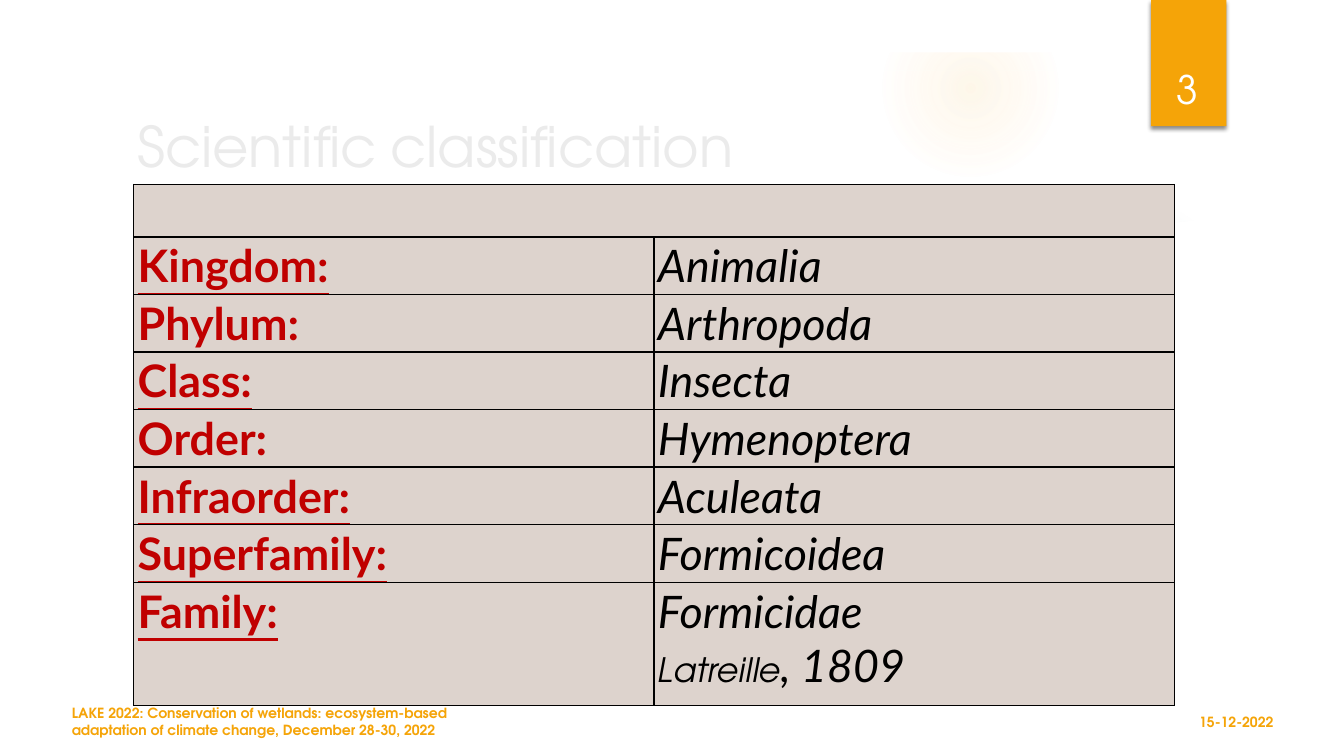
import pptx
import pptx.dml.color
import pptx.enum.shapes
import pptx.enum.text
import pptx.oxml
import pptx.oxml.ns
import pptx.util

Cm, Pt = pptx.util.Cm, pptx.util.Pt
RGBColor = pptx.dml.color.RGBColor
ALIGN = pptx.enum.text.PP_ALIGN
ANCHOR = pptx.enum.text.MSO_ANCHOR
SHAPE = pptx.enum.shapes.MSO_SHAPE

AMBER = RGBColor(0xF5, 0xA4, 0x08)
GLOW_AMBER = RGBColor(0xFA, 0xC9, 0x6A)
GLOW_BLUE = RGBColor(0x8E, 0xBB, 0xD2)
WHITE = RGBColor(0xFF, 0xFF, 0xFF)
PALE = RGBColor(0xEB, 0xEB, 0xEB)
BEIGE = RGBColor(0xDD, 0xD3, 0xCD)
RED = RGBColor(0xC0, 0x00, 0x00)
BLACK = RGBColor(0x00, 0x00, 0x00)
HEADING_FONT, TABLE_FONT = "TeX Gyre Adventor", "Lato"

TITLE = [("Scientific", 40), (" ", 36), ("classification", 40)]
RANKS = [
    ("Kingdom:", "Animalia"),
    ("Phylum:", "Arthropoda"),
    ("Class:", "Insecta"),
    ("Order:", "Hymenoptera"),
    ("Infraorder:", "Aculeata"),
    ("Superfamily:", "Formicoidea"),
    ("Family:", "Formicidae"),
]
AUTHORITY = [("Latreille", 24, HEADING_FONT), (", 1809", 32, TABLE_FONT)]
CONFERENCE = ("LAKE 2022: Conservation of wetlands: ecosystem-based "
              "adaptation of climate change, December 28-30, 2022")
DATE = "15-12-2022"
PAGE = "3"

SLIDE_WIDTH, SLIDE_HEIGHT = 33.87, 19.05
TABLE_LEFT, TABLE_TOP, COLUMN_WIDTH = 3.37, 4.65, 13.11
ROW_HEIGHTS = [1.32] + [1.45] * 6 + [3.1]

# Box, colour, then (position %, opacity %) stops
GLOWS = [
    ((23.9, 4.65, 7.82, 7.82), GLOW_BLUE, [(0, 7), (36, 6), (69, 0)]),
    ((22.23, 0, 4.45, 4.45), GLOW_AMBER, [(0, 14), (36, 7), (73, 0)]),
]
# Curved upper edge of the white panel, right to left, then its lower corners
PANEL = [(32.6, 5.18), (30.48, 5.51), (28.35, 5.77), (26.21, 5.97), (24.1, 6.12),
         (22.02, 6.22), (19.97, 6.27), (17.98, 6.3), (16.05, 6.27), (14.2, 6.25),
         (12.4, 6.17), (10.19, 6.05), (8.15, 5.92), (6.32, 5.77), (4.75, 5.61),
         (3.43, 5.46), (2.39, 5.33), (1.27, 5.18), (1.27, 17.78), (32.6, 17.78)]
DRAWING_NS = pptx.oxml.ns.nsdecls("a")


def add_run(paragraph, text, size, font, color, bold=False, italic=False, underline=False):
    run = paragraph.add_run()
    run.text = text
    run.font.size = Pt(size)
    run.font.name = font
    run.font.color.rgb = color
    run.font.bold, run.font.italic, run.font.underline = bold, italic, underline


def add_text(slide, box, runs, color, anchor, align=ALIGN.LEFT, bold=False):
    frame = slide.shapes.add_textbox(*map(Cm, box)).text_frame
    frame.word_wrap = True
    frame.vertical_anchor = anchor
    frame.paragraphs[0].alignment = align
    for text, size in runs:
        add_run(frame.paragraphs[0], text, size, HEADING_FONT, color, bold)


def paint(shape, color):
    shape.shadow.inherit = False
    shape.fill.solid()
    shape.fill.fore_color.rgb = color
    shape.line.fill.background()
    return shape


def add_glow(slide, box, color, stops):
    """Circle whose colour fades out towards its rim."""
    circle = paint(slide.shapes.add_shape(SHAPE.OVAL, *map(Cm, box)), color)
    properties = circle.element.spPr
    stop_list = "".join(
        f'<a:gs pos="{position * 1000}"><a:srgbClr val="{color}">'
        f'<a:alpha val="{opacity * 1000}"/></a:srgbClr></a:gs>'
        for position, opacity in stops)
    gradient = pptx.oxml.parse_xml(
        f'<a:gradFill {DRAWING_NS}><a:gsLst>{stop_list}</a:gsLst><a:path path="circle">'
        '<a:fillToRect l="50000" t="50000" r="50000" b="50000"/></a:path></a:gradFill>')
    solid = properties.find(pptx.oxml.ns.qn("a:solidFill"))
    properties.replace(solid, gradient)


def add_outline(slide, *contours):
    """White shape; a second contour cuts a hole in the first."""
    points = [[(Cm(x), Cm(y)) for x, y in contour] for contour in contours]
    builder = slide.shapes.build_freeform(*points[0][0])
    builder.add_line_segments(points[0][1:], close=True)
    for hole in points[1:]:
        builder.move_to(*hole[0])
        builder.add_line_segments(hole[1:], close=True)
    paint(builder.convert_to_shape(), WHITE)


def add_page_tab(slide, box):
    tab = paint(slide.shapes.add_shape(SHAPE.RECTANGLE, *map(Cm, box)), AMBER)
    effects = tab.element.spPr.find(pptx.oxml.ns.qn("a:effectLst"))
    effects.append(pptx.oxml.parse_xml(
        f'<a:outerShdw {DRAWING_NS} blurRad="{Pt(3)}" dist="{Pt(2)}" dir="5400000" '
        f'rotWithShape="0"><a:srgbClr val="{BLACK}"><a:alpha val="45000"/></a:srgbClr>'
        '</a:outerShdw>'))


def style_cell(cell):
    cell.margin_left = cell.margin_right = Cm(0.1)
    cell.margin_top = cell.margin_bottom = Cm(0.04)
    properties = cell._tc.get_or_add_tcPr()
    for side in ("lnL", "lnR", "lnT", "lnB"):
        properties.append(pptx.oxml.parse_xml(
            f'<a:{side} {DRAWING_NS} w="{Pt(1)}"><a:solidFill>'
            f'<a:srgbClr val="{BLACK}"/></a:solidFill></a:{side}>'))
    cell.fill.solid()
    cell.fill.fore_color.rgb = BEIGE


def add_classification(slide):
    table = slide.shapes.add_table(
        len(ROW_HEIGHTS), 2, Cm(TABLE_LEFT), Cm(TABLE_TOP),
        Cm(2 * COLUMN_WIDTH), Cm(sum(ROW_HEIGHTS))).table
    table.first_row = table.horz_banding = False
    for column in table.columns:
        column.width = Cm(COLUMN_WIDTH)
    for row, height in zip(table.rows, ROW_HEIGHTS):
        row.height = Cm(height)
    for cell in table.iter_cells():
        style_cell(cell)
    table.cell(0, 0).merge(table.cell(0, 1))

    for number, (rank, taxon) in enumerate(RANKS, start=1):
        add_run(table.cell(number, 0).text_frame.paragraphs[0], rank, 32,
                TABLE_FONT, RED, bold=True, underline=True)
        taxon_line = table.cell(number, 1).text_frame.paragraphs[0]
        add_run(taxon_line, taxon, 32, TABLE_FONT, BLACK, italic=True)
    taxon_line.add_line_break()
    for text, size, font in AUTHORITY:
        add_run(taxon_line, text, size, font, BLACK, italic=True)


def rectangle(left, top, right, bottom):
    return [(left, top), (left, bottom), (right, bottom), (right, top)]


def main():
    deck = pptx.Presentation()
    deck.slide_width, deck.slide_height = Cm(SLIDE_WIDTH), Cm(SLIDE_HEIGHT)
    slide = deck.slides.add_slide(deck.slide_layouts[6])
    for box, color, stops in GLOWS:
        add_glow(slide, box, color, stops)
    add_outline(slide, PANEL)
    add_outline(slide, rectangle(0, 0, SLIDE_WIDTH, SLIDE_HEIGHT),
                rectangle(1.32, 1.32, 32.54, 17.73)[::-1])
    add_page_tab(slide, (29.01, 0, 1.9, 3.18))
    add_text(slide, (3.21, 2.64, 24.33, 2.03), TITLE, PALE, ANCHOR.MIDDLE)
    add_classification(slide)
    add_text(slide, (29.59, 17.77, 2.75, 0.85), [(DATE, 10)], AMBER,
             ANCHOR.MIDDLE, ALIGN.RIGHT, bold=True)
    add_text(slide, (1.56, 17.76, 10.72, 0.85), [(CONFERENCE, 10)], AMBER,
             ANCHOR.MIDDLE, bold=True)
    add_text(slide, (28.75, 0.83, 2.34, 2.13), [(PAGE, 28)], WHITE,
             ANCHOR.BOTTOM, ALIGN.CENTER)
    deck.save("out.pptx")


if __name__ == "__main__":
    main()
